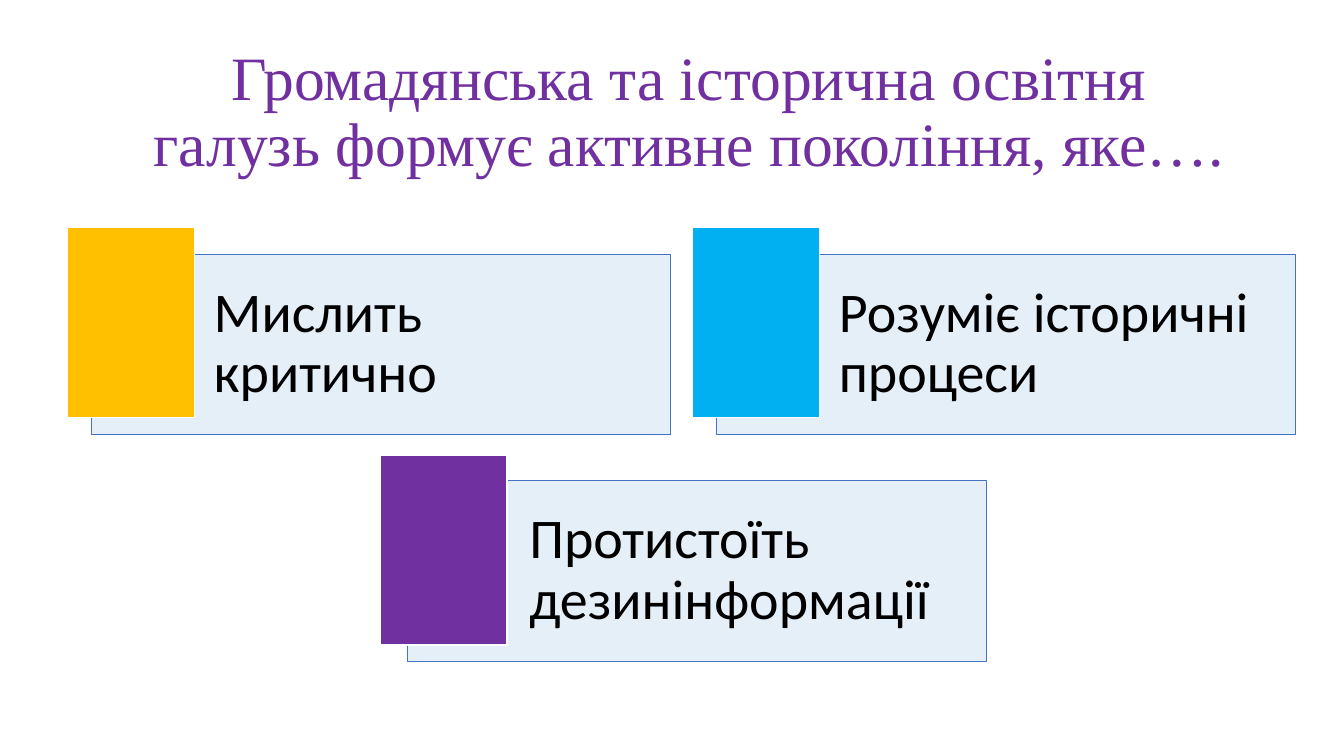
from lxml.etree import SubElement
from pptx import Presentation
from pptx.dml.color import RGBColor
from pptx.enum.shapes import MSO_SHAPE
from pptx.enum.text import MSO_ANCHOR, PP_ALIGN
from pptx.oxml.ns import qn
from pptx.util import Inches, Pt

# Content: text, accent colour, card position, accent position
TITLE = "Громадянська та історична освітня галузь формує активне покоління, яке…."
CARDS = [
    ("Мислить критично", "gold", (0.91, 2.52), (0.67, 2.26)),
    ("Розуміє історичні процеси", "blue", (7.11, 2.52), (6.87, 2.26)),
    ("Протистоїть дезинінформації", "purple", (4.04, 4.77), (3.77, 4.52)),
]
COLORS = {
    "gold": "FFC000", "blue": "00B0F0", "purple": "7030A0", "card": "BDD7EE",
    "border": "4472C4", "white": "FFFFFF", "black": "000000",
}
CARD_SIZE = (5.74, 1.79)
ACCENT_SIZE = (1.26, 1.88)
CARD_FRAME = {
    "margin_left": Inches(1.21), "margin_right": Inches(0.17),
    "margin_top": Inches(0.17), "margin_bottom": Inches(0.17),
    "vertical_anchor": MSO_ANCHOR.MIDDLE, "word_wrap": True,
}


def rgb(name):
    return RGBColor.from_string(COLORS[name])


def set_attrs(obj, values):
    for name, value in values.items():
        setattr(obj, name, value)


def write(tf, text, font, size, color, align):
    p = tf.paragraphs[0]
    set_attrs(p, {"alignment": align, "line_spacing": 0.9})
    r = p.add_run()
    r.text = text
    set_attrs(r.font, {"name": font, "size": Pt(size)})
    r.font.color.rgb = rgb(color)


def add_rect(s, pos, size, fill, line, width):
    sp = s.shapes.add_shape(MSO_SHAPE.RECTANGLE, *map(Inches, pos + size))
    sp.shadow.inherit = False
    sp.fill.solid()
    sp.fill.fore_color.rgb = rgb(fill)
    sp.line.color.rgb = rgb(line)
    sp.line.width = Pt(width)
    return sp


def set_opacity(sp, percent):
    color = sp.fill._xPr.find(qn("a:solidFill"))[0]
    SubElement(color, qn("a:alpha"), val=str(percent * 1000))


prs = Presentation()
prs.slide_width, prs.slide_height = Inches(13.33), Inches(7.5)
s = prs.slides.add_slide(prs.slide_layouts[5])

# Title
title = s.shapes.title
set_attrs(title, {"left": Inches(1.37), "top": Inches(0.4),
                  "width": Inches(10.93), "height": Inches(1.45)})
set_attrs(title.text_frame, {"vertical_anchor": MSO_ANCHOR.MIDDLE, "word_wrap": True})
write(title.text_frame, TITLE, "Times New Roman", 44, "purple", PP_ALIGN.CENTER)

# Cards with their accent blocks
for text, accent, card_pos, accent_pos in CARDS:
    card = add_rect(s, card_pos, CARD_SIZE, "card", "border", 0.5)
    set_opacity(card, 40)
    set_attrs(card.text_frame, CARD_FRAME)
    write(card.text_frame, text, "Calibri", 40, "black", PP_ALIGN.LEFT)
    add_rect(s, accent_pos, ACCENT_SIZE, accent, "white", 1)

prs.save("out.pptx")
